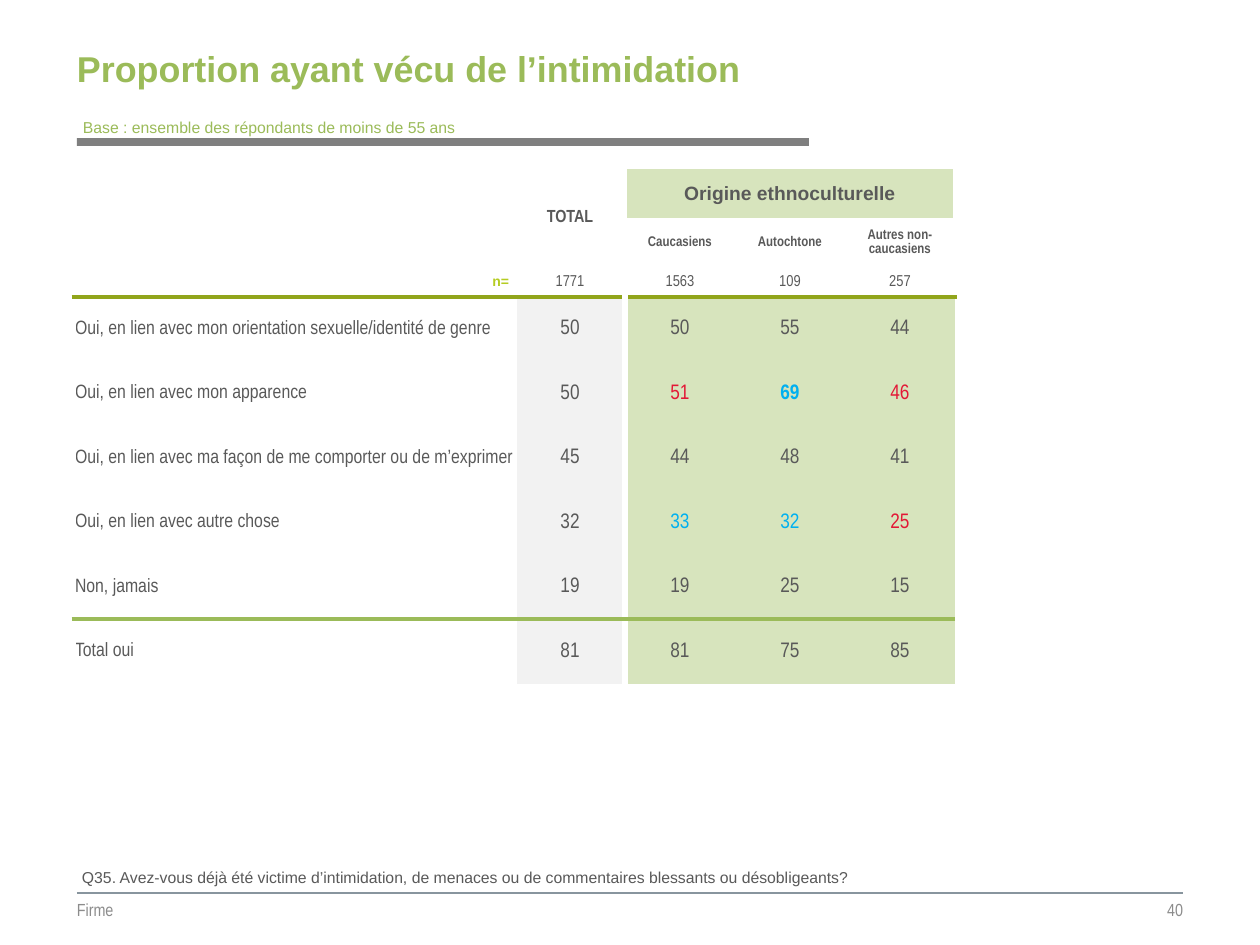
import pptx
import pptx.dml.color
import pptx.enum.shapes
import pptx.enum.text
import pptx.oxml.ns
import pptx.util
from dataclasses import dataclass
from lxml import etree

ALIGN = pptx.enum.text.PP_ALIGN
ANCHOR = pptx.enum.text.MSO_ANCHOR
COLORS = {
    "green": "9BBB59", "olive": "91A51B", "lime": "B5CC22", "pale": "D7E4BD",
    "text": "595959", "muted": "8C8C8C", "bar": "7F7F7F", "rule": "88959E",
    "light": "F2F2F2", "white": "FFFFFF", "red": "E31836", "blue": "00B0F0",
}


@dataclass
class Style:
    size: float
    font: str = "Arial Narrow"
    color: str = "text"
    bold: bool = False
    align: ALIGN = ALIGN.CENTER


@dataclass
class Label:
    text: str
    box: tuple[int, int, int, int]
    style: Style
    inset: tuple[int, int] = (13, 6)
    anchor: ANCHOR = ANCHOR.TOP
    wrap: bool = True


def px(n: int) -> pptx.util.Emu:
    return pptx.util.Emu(round(n * 914400 / 126))


def rgb(name: str) -> pptx.dml.color.RGBColor:
    return pptx.dml.color.RGBColor.from_string(COLORS[name])


def write(tf, text: str, style: Style) -> None:
    p = tf.paragraphs[0]
    p.alignment = style.align
    r = p.add_run()
    r.text = text
    r.font.size = pptx.util.Pt(style.size)
    r.font.name = style.font
    r.font.bold = style.bold
    r.font.color.rgb = rgb(style.color)


def set_insets(tf, x: int, top: int, bottom: int) -> None:
    tf.margin_left = tf.margin_right = px(x)
    tf.margin_top, tf.margin_bottom = px(top), px(bottom)


def add_label(s, label: Label) -> None:
    tf = s.shapes.add_textbox(*map(px, label.box)).text_frame
    tf.word_wrap = label.wrap
    tf.vertical_anchor = label.anchor
    x, y = label.inset
    set_insets(tf, x, y, y)
    write(tf, label.text, label.style)


def set_border(cell, side: str, color: str, width: float) -> None:
    """Draw one cell edge; a width of 0 removes it."""
    qn = pptx.oxml.ns.qn
    ln = etree.SubElement(cell._tc.get_or_add_tcPr(), qn(f"a:ln{side}"))
    ln.set("w", str(pptx.util.Pt(width)))
    if width:
        fill = etree.SubElement(ln, qn("a:solidFill"))
        etree.SubElement(fill, qn("a:srgbClr")).set("val", COLORS[color])
    else:
        etree.SubElement(ln, qn("a:noFill"))


def fill_cell(cell, color: str | None) -> None:
    if color:
        cell.fill.solid()
        cell.fill.fore_color.rgb = rgb(color)
    else:
        cell.fill.background()


# Table content: header rows, sample sizes, then percentages
HEADER_ROWS = 3
ROWS = [
    ("", "TOTAL", "Origine ethnoculturelle", "", ""),
    ("", "", "Caucasiens", "Autochtone", "Autres non-caucasiens"),
    ("n=", "1771", "1563", "109", "257"),
    ("Oui, en lien avec mon orientation sexuelle/identité de genre", "50", "50", "55", "44"),
    ("Oui, en lien avec mon apparence", "50", "51", "69", "46"),
    ("Oui, en lien avec ma façon de me comporter ou de m’exprimer", "45", "44", "48", "41"),
    ("Oui, en lien avec autre chose", "32", "33", "32", "25"),
    ("Non, jamais", "19", "19", "25", "15"),
    ("Total oui", "81", "81", "75", "85"),
]
COL_WIDTHS = [441, 110, 110, 110, 110]
ROW_HEIGHTS = [49, 49, 30] + [64 + i % 2 for i in range(6)]
HEADER_EDGES = [3, 3, 3, 3, 3, 3]
DATA_EDGES = [3, 3, 4.5, 0, 0, 0]
ROW_RULES = {3: ("olive", 3), 8: ("green", 2.25)}  # keyed by the row below
DATA_FILLS = [None, "light", "pale", "pale", "pale"]

SPECIAL_STYLES = {
    (0, 1): Style(10, bold=True),
    (0, 2): Style(11, "Arial", bold=True),
    (2, 0): Style(8, "Arial", "lime", True, ALIGN.RIGHT),
    (4, 2): Style(12, color="red"),
    (4, 3): Style(12, color="blue", bold=True),
    (4, 4): Style(12, color="red"),
    (6, 2): Style(12, color="blue"),
    (6, 3): Style(12, color="blue"),
    (6, 4): Style(12, color="red"),
}


def cell_style(row: int, col: int) -> Style:
    if (row, col) in SPECIAL_STYLES:
        return SPECIAL_STYLES[row, col]
    if row < HEADER_ROWS:
        return Style(9) if row == 2 else Style(8, bold=True)
    return Style(12) if col else Style(11, align=ALIGN.LEFT)


def add_results_table(s) -> None:
    box = (74, 169, sum(COL_WIDTHS), sum(ROW_HEIGHTS))
    table = s.shapes.add_table(len(ROWS), len(COL_WIDTHS), *map(px, box)).table
    table.first_row = table.horz_banding = False
    for column, width in zip(table.columns, COL_WIDTHS):
        column.width = px(width)
    for row, height in zip(table.rows, ROW_HEIGHTS):
        row.height = px(height)
    table.cell(0, 1).merge(table.cell(1, 1))
    table.cell(0, 2).merge(table.cell(0, 4))

    for i, texts in enumerate(ROWS):
        is_data = i >= HEADER_ROWS
        edges = DATA_EDGES if is_data else HEADER_EDGES
        for j, text in enumerate(texts):
            cell = table.cell(i, j)
            set_border(cell, "L", "white", edges[j])
            set_border(cell, "R", "white", edges[j + 1])
            set_border(cell, "T", *ROW_RULES.get(i, ("white", 0)))
            set_border(cell, "B", *ROW_RULES.get(i + 1, ("white", 0)))
            group_title = i == 0 and j >= 2
            fill_cell(cell, DATA_FILLS[j] if is_data or group_title else None)
            cell.vertical_anchor = ANCHOR.MIDDLE
            set_insets(cell, *((6, 0, 0) if text == "n=" else (1, 1, 0)))
            if text:
                write(cell.text_frame, text, cell_style(i, j))
                if text == "n=":
                    cell.text_frame.paragraphs[0].line_spacing = 0.95


def add_title(s, text: str) -> None:
    sp = s.shapes.title
    sp.left, sp.top, sp.width, sp.height = map(px, (77, 45, 732, 87))
    tf = sp.text_frame
    tf.auto_size = pptx.enum.text.MSO_AUTO_SIZE.NONE
    tf.vertical_anchor = ANCHOR.TOP
    set_insets(tf, 0, 2, 0)
    write(tf, text, Style(20.5, "Arial", "green", True, ALIGN.LEFT))


def add_bar(s) -> None:
    sp = s.shapes.add_shape(pptx.enum.shapes.MSO_SHAPE.RECTANGLE, *map(px, (77, 138, 732, 8)))
    sp.shadow.inherit = False
    sp.fill.solid()
    sp.fill.fore_color.rgb = rgb("bar")
    sp.line.fill.background()


def add_footer_rule(s) -> None:
    line = s.shapes.add_connector(
        pptx.enum.shapes.MSO_CONNECTOR.STRAIGHT, *map(px, (77, 893, 1183, 893)))
    line.line.color.rgb = rgb("rule")
    line.line.width = pptx.util.Pt(1.5)
    etree.SubElement(line._element.spPr, pptx.oxml.ns.qn("a:effectLst"))


LABELS = [
    Label("Firme", (77, 893, 353, 33), Style(10, color="muted", align=ALIGN.LEFT),
          (0, 0), ANCHOR.MIDDLE),
    Label("40", (825, 893, 358, 33), Style(10, color="muted", align=ALIGN.RIGHT),
          (0, 0), ANCHOR.MIDDLE),
    Label("Base : ensemble des répondants de moins de 55 ans", (70, 112, 401, 32),
          Style(9, "Arial", "green", align=ALIGN.LEFT), wrap=False),
    Label("Q35. Avez-vous déjà été victime d’intimidation, de menaces ou de commentaires "
          "blessants ou désobligeants?", (69, 862, 1077, 32),
          Style(9, "Arial", align=ALIGN.LEFT)),
]


def main() -> None:
    prs = pptx.Presentation()
    prs.slide_width, prs.slide_height = px(1260), px(945)
    s = prs.slides.add_slide(prs.slide_layouts[5])
    add_title(s, "Proportion ayant vécu de l’intimidation")
    add_footer_rule(s)
    add_bar(s)
    add_results_table(s)
    for label in LABELS:
        add_label(s, label)
    prs.save("out.pptx")


if __name__ == "__main__":
    main()
